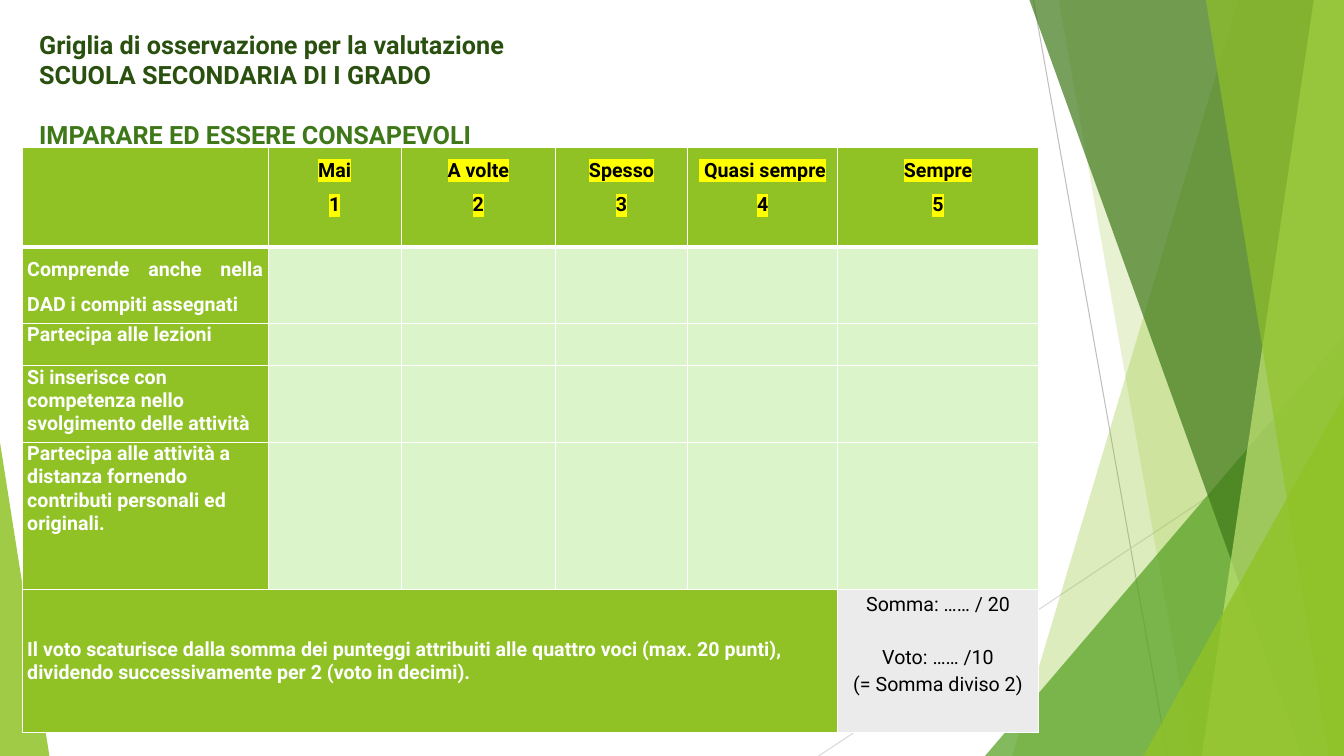
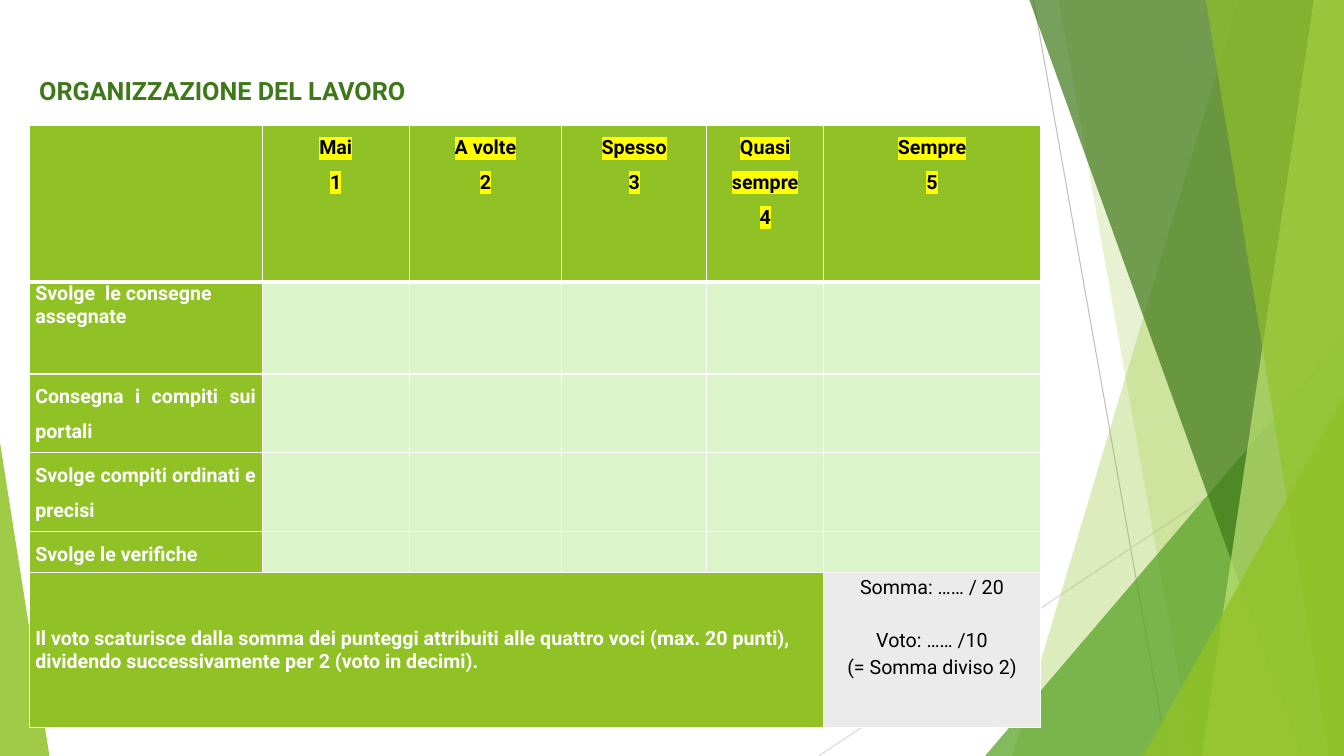
from lxml import etree
from pptx import Presentation
from pptx.dml.color import RGBColor
from pptx.enum.shapes import MSO_CONNECTOR, MSO_SHAPE
from pptx.enum.text import MSO_ANCHOR, PP_ALIGN
from pptx.oxml.ns import qn
from pptx.util import Inches, Pt

CENTER, JUSTIFY, LEFT = PP_ALIGN.CENTER, PP_ALIGN.JUSTIFY, PP_ALIGN.LEFT
TRIANGLE = MSO_SHAPE.ISOSCELES_TRIANGLE
STRAIGHT = MSO_CONNECTOR.STRAIGHT
MIDDLE, TOP = MSO_ANCHOR.MIDDLE, MSO_ANCHOR.TOP

WIDTH, HEIGHT = 13.33, 7.5
FONT = "Roboto"
WHITE, BLACK, YELLOW = "FFFFFF", "000000", "FFFF00"
LIME, PALE_LIME, GREEN, DARK_GREEN = "90C226", "C0E474", "54A021", "3F7819"
DEEP_GREEN, MINT, GREY = "2A5010", "DBF4CA", "EBEBEB"
NO_TABLE_STYLE = "{2D5ABB26-0587-4C30-8999-92F81FD0307C}"

NOTE = ("Il voto scaturisce dalla somma dei punteggi attribuiti alle quattro voci "
        "(max. 20 punti), dividendo successivamente per 2 (voto in decimi).")
RESULT = ["Somma: …… / 20", "Voto: …… /10", "(= Somma diviso 2)"]


def rgb(color):
    return RGBColor.from_string(color)


def paint(shape, color, opacity):
    """Fill with a translucent colour, without outline or shadow."""
    shape.shadow.inherit = False
    shape.line.fill.background()
    shape.fill.solid()
    shape.fill.fore_color.rgb = rgb(color)
    srgb = shape.fill._xPr.find(".//" + qn("a:srgbClr"))
    etree.SubElement(srgb, qn("a:alpha"), val=str(opacity * 1000))


def add_line(s, start, end, color):
    line = s.shapes.add_connector(STRAIGHT, *map(Inches, start + end))
    line.line.color.rgb = rgb(color)
    line.line.width = Pt(0.75)
    etree.SubElement(line._element.spPr, qn("a:effectLst"))


def add_facet(s, top_x, bottom_x, color, opacity):
    """Full-height band from a slanted left edge to the right slide edge."""
    builder = s.shapes.build_freeform(Inches(top_x), 0)
    corners = [(WIDTH, 0), (WIDTH, HEIGHT), (bottom_x, HEIGHT)]
    builder.add_line_segments([(Inches(x), Inches(y)) for x, y in corners])
    paint(builder.convert_to_shape(), color, opacity)


def add_corner(s, left, top, right, apex, color, opacity):
    """Right triangle standing on the bottom edge; apex 0 is left, 1 is right."""
    box = (left, top, right - left, HEIGHT - top)
    sp = s.shapes.add_shape(TRIANGLE, *map(Inches, box))
    sp.adjustments[0] = apex
    paint(sp, color, opacity)


def add_decoration(s):
    add_line(s, (10.25, 0), (11.58, HEIGHT), "BFBFBF")
    add_line(s, (WIDTH, 4.03), (8.12, HEIGHT), "D9D9D9")
    add_facet(s, 12.28, 10.04, LIME, 30)
    add_facet(s, 10.5, 11.83, LIME, 20)
    add_corner(s, 9.77, 3.33, WIDTH, 1, GREEN, 72)
    add_facet(s, 10.21, 12.91, DARK_GREEN, 70)
    add_facet(s, 13.03, 11.92, PALE_LIME, 70)
    add_facet(s, 11.96, 13.18, LIME, 65)
    add_corner(s, 11.34, 3.93, WIDTH, 1, LIME, 80)
    add_corner(s, 0, 4.39, 0.49, 0, LIME, 85)


def write(tf, lines, size, color, bold=True, align=LEFT, spacing=None):
    """Write one paragraph per line and return the paragraphs."""
    for i, text in enumerate(lines):
        p = tf.paragraphs[0] if i == 0 else tf.add_paragraph()
        p.add_run().text = text
        p.alignment = align
        if spacing:
            p.line_spacing = spacing
        p.font.name, p.font.size, p.font.bold = FONT, Pt(size), bold
        p.font.color.rgb = rgb(color)
    return tf.paragraphs


def add_title(s, top, lines):
    """Title box; the last line is the heading of the table."""
    box = s.shapes.add_textbox(Inches(0.29), Inches(top), Inches(9.86),
                               Inches(0.1 + 0.3 * len(lines)))
    box.text_frame.word_wrap = True
    *intro, heading = write(box.text_frame, lines, 18, DEEP_GREEN)
    heading.font.color.rgb = rgb(DARK_GREEN)
    if intro:
        heading.space_before = Pt(21)


def highlight(p):
    for r in p.runs:
        mark = etree.SubElement(r._r.get_or_add_rPr(), qn("a:highlight"))
        etree.SubElement(mark, qn("a:srgbClr"), val=YELLOW)


def set_borders(cell, top=1, bottom=1):
    tc_pr = cell._tc.get_or_add_tcPr()
    widths = [("L", 1), ("R", 1), ("T", top), ("B", bottom)]
    for i, (side, width) in enumerate(widths):
        ln = etree.Element(qn("a:ln" + side), w=str(Pt(width)))
        fill = etree.SubElement(ln, qn("a:solidFill"))
        etree.SubElement(fill, qn("a:srgbClr"), val=WHITE)
        tc_pr.insert(i, ln)


def format_cell(cell, fill, inset, anchor=TOP):
    cell.fill.solid()
    cell.fill.fore_color.rgb = rgb(fill)
    cell.margin_left = cell.margin_right = Inches(inset)
    cell.margin_top = cell.margin_bottom = 0
    cell.vertical_anchor = anchor


def add_grid(s, left, top, widths, heights, inset, levels, criteria):
    """Rating grid: level headings, criteria with empty marks, final sum."""
    frame = s.shapes.add_table(len(heights), len(widths), Inches(left), Inches(top),
                               Inches(sum(widths)), Inches(sum(heights)))
    table = frame.table
    table.first_row = table.horz_banding = False
    table._tbl.tblPr.find(qn("a:tableStyleId")).text = NO_TABLE_STYLE
    for column, width in zip(table.columns, widths):
        column.width = Inches(width)
    for row, height in zip(table.rows, heights):
        row.height = Inches(height)

    last_row, last_col = len(heights) - 1, len(widths) - 1
    for i in range(len(heights)):
        for j in range(len(widths)):
            cell = table.cell(i, j)
            format_cell(cell, LIME if i == 0 or j == 0 else MINT, inset)
            set_borders(cell, top=3 if i == 1 else 1, bottom=3 if i == 0 else 1)

    for score, level in enumerate(levels, 1):
        tf = table.cell(0, score).text_frame
        for p in write(tf, [level, str(score)], 14, BLACK, align=CENTER, spacing=1.5):
            highlight(p)
    for i, (text, align) in enumerate(criteria, 1):
        write(table.cell(i, 0).text_frame, [text], 14, WHITE, align=align,
              spacing=1.5 if align == JUSTIFY else None)

    note = table.cell(last_row, 0)
    note.merge(table.cell(last_row, last_col - 1))
    format_cell(note, LIME, inset, MIDDLE)
    write(note.text_frame, [NOTE], 14, WHITE)
    result = table.cell(last_row, last_col)
    format_cell(result, GREY, inset)
    lines = write(result.text_frame, RESULT, 14, BLACK, False, CENTER, 1.15)
    lines[1].space_before = Pt(19)


def add_slide(prs, grid, title):
    s = prs.slides.add_slide(prs.slide_layouts[6])
    add_decoration(s)
    add_grid(s, **grid)
    add_title(s, **title)


def main():
    prs = Presentation()
    prs.slide_width, prs.slide_height = Inches(WIDTH), Inches(HEIGHT)
    add_slide(
        prs,
        grid=dict(
            left=0.22, top=1.46, inset=0.05,
            widths=[2.44, 1.32, 1.53, 1.31, 1.49, 1.99],
            heights=[0.99, 0.76, 0.42, 0.76, 1.46, 1.42],
            levels=["Mai", "A volte", "Spesso", " Quasi sempre", "Sempre"],
            criteria=[
                ("Comprende anche nella DAD i compiti assegnati", JUSTIFY),
                ("Partecipa alle lezioni", LEFT),
                ("Si inserisce con competenza nello svolgimento delle attività", LEFT),
                ("Partecipa alle attività a distanza fornendo contributi personali "
                 "ed originali.", LEFT),
            ]),
        title=dict(top=0.24, lines=["Griglia di osservazione per la valutazione",
                                    "SCUOLA SECONDARIA DI I GRADO",
                                    "IMPARARE ED ESSERE CONSAPEVOLI"]))
    add_slide(
        prs,
        grid=dict(
            left=0.29, top=1.24, inset=0.06,
            widths=[2.31, 1.46, 1.51, 1.44, 1.16, 2.15],
            heights=[1.56, 0.91, 0.78, 0.78, 0.41, 1.54],
            levels=["Mai", "A volte", "Spesso", "Quasi sempre", "Sempre"],
            criteria=[
                ("Svolge  le consegne assegnate", LEFT),
                ("Consegna i compiti sui portali", JUSTIFY),
                ("Svolge compiti ordinati e precisi", JUSTIFY),
                ("Svolge le verifiche", JUSTIFY),
            ]),
        title=dict(top=0.7, lines=["ORGANIZZAZIONE DEL LAVORO"]))
    prs.save("out.pptx")


if __name__ == "__main__":
    main()
